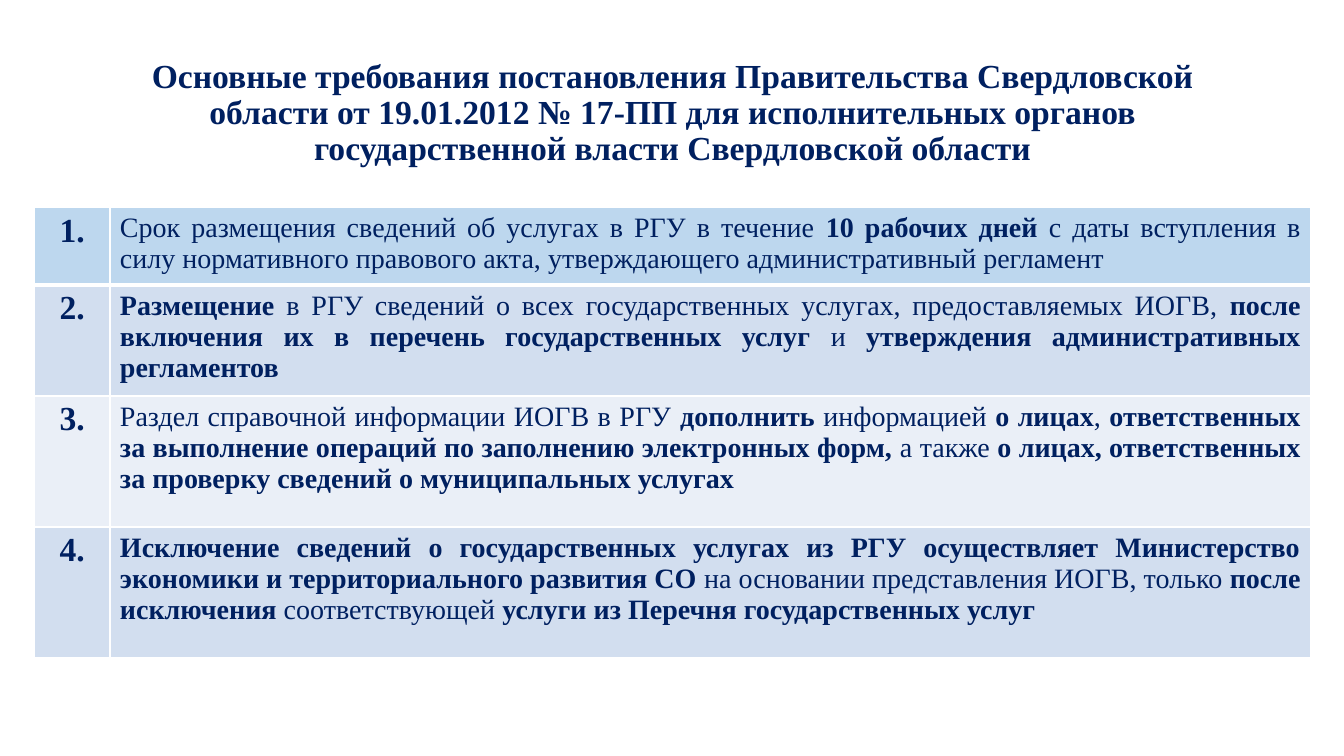
from lxml import etree
from pptx import Presentation, util as u
from pptx.dml.color import RGBColor
from pptx.enum import text
from pptx.oxml.ns import qn

COLORS = {"navy": "002060", "line": "FFFFFF", "first": "BDD7EE",
          "even": "D2DEEF", "odd": "EAEFF7"}
FONT = "Times New Roman"

# Double asterisks switch bold on and off
TITLE = ("Основные требования постановления Правительства Свердловской области "
         "от 19.01.2012 № 17-ПП для исполнительных органов государственной власти "
         "Свердловской области")
REQUIREMENTS = [
    ("first", 0.76, "Срок размещения сведений об услугах в РГУ в течение** 10 рабочих дней **"
     "с даты вступления в силу нормативного правового акта, утверждающего "
     "административный регламент"),
    ("even", 1.09, "**Размещение** в РГУ сведений о всех государственных услугах, "
     "предоставляемых ИОГВ, **после включения их в перечень государственных услуг **и "
     "**утверждения административных регламентов**"),
    ("odd", 1.3, "Раздел справочной информации ИОГВ в РГУ **дополнить** информацией "
     "**о лицах**, **ответственных за выполнение операций по заполнению электронных "
     "форм, **а также** о лицах, ответственных за проверку сведений о муниципальных "
     "услугах**"),
    ("even", 1.3, "**Исключение сведений о государственных услугах из РГУ осуществляет "
     "Министерство экономики и территориального развития СО **на основании представления "
     "ИОГВ, только **после исключения** соответствующей **услуги из Перечня "
     "государственных услуг**"),
]


def write(paragraph, marked, size, align):
    paragraph.alignment = align
    paragraph.font.size = u.Pt(size)
    paragraph.font.name = FONT
    paragraph.font.color.rgb = RGBColor.from_string(COLORS["navy"])
    for i, part in enumerate(marked.split("**")):
        if part:
            run = paragraph.add_run()
            run.text = part
            run.font.bold = i % 2 == 1
            run.font.size = u.Pt(size)
            run.font.name = FONT
            run.font.color.rgb = RGBColor.from_string(COLORS["navy"])


def set_borders(cell, widths):
    properties = cell._tc.get_or_add_tcPr()
    for i, (side, points) in enumerate(widths.items()):
        line = etree.Element(qn(f"a:ln{side}"), w=str(u.Pt(points)))
        fill = etree.SubElement(line, qn("a:solidFill"))
        etree.SubElement(fill, qn("a:srgbClr"), val=COLORS["line"])
        properties.insert(i, line)


deck = Presentation()
deck.slide_width, deck.slide_height = u.Inches(13.33), u.Inches(7.5)
slide = deck.slides.add_slide(deck.slide_layouts[6])

# Title
heading = slide.shapes.add_textbox(
    u.Inches(0.92), u.Inches(0.4), u.Inches(11.5), u.Inches(1.45)).text_frame
heading.word_wrap = True
heading.vertical_anchor = text.MSO_ANCHOR.MIDDLE
heading.paragraphs[0].line_spacing = 0.9
write(heading.paragraphs[0], f"**{TITLE}**", 24, text.PP_ALIGN.CENTER)

# Numbered requirements
column_widths = (0.75, 11.91)
requirements = slide.shapes.add_table(
    len(REQUIREMENTS), len(column_widths), u.Inches(0.34), u.Inches(2.06),
    u.Inches(sum(column_widths)), u.Inches(sum(r[1] for r in REQUIREMENTS))).table
for column, width in zip(requirements.columns, column_widths):
    column.width = u.Inches(width)

last = len(REQUIREMENTS) - 1
for number, (shade, height, wording) in enumerate(REQUIREMENTS):
    row = requirements.rows[number]
    row.height = u.Inches(height)
    number_cell, wording_cell = row.cells
    write(number_cell.text_frame.paragraphs[0], f"**{number + 1}.**", 24,
          text.PP_ALIGN.CENTER)
    write(wording_cell.text_frame.paragraphs[0], wording, 20, text.PP_ALIGN.JUSTIFY)
    for cell in row.cells:
        cell.fill.solid()
        cell.fill.fore_color.rgb = RGBColor.from_string(COLORS[shade])
        # A thicker rule parts the first row from the rest
        set_borders(cell, {"L": 1, "R": 1, "T": 3 if number == 1 else 1,
                           "B": 3 if number == 0 else 1})

deck.save("out.pptx")
